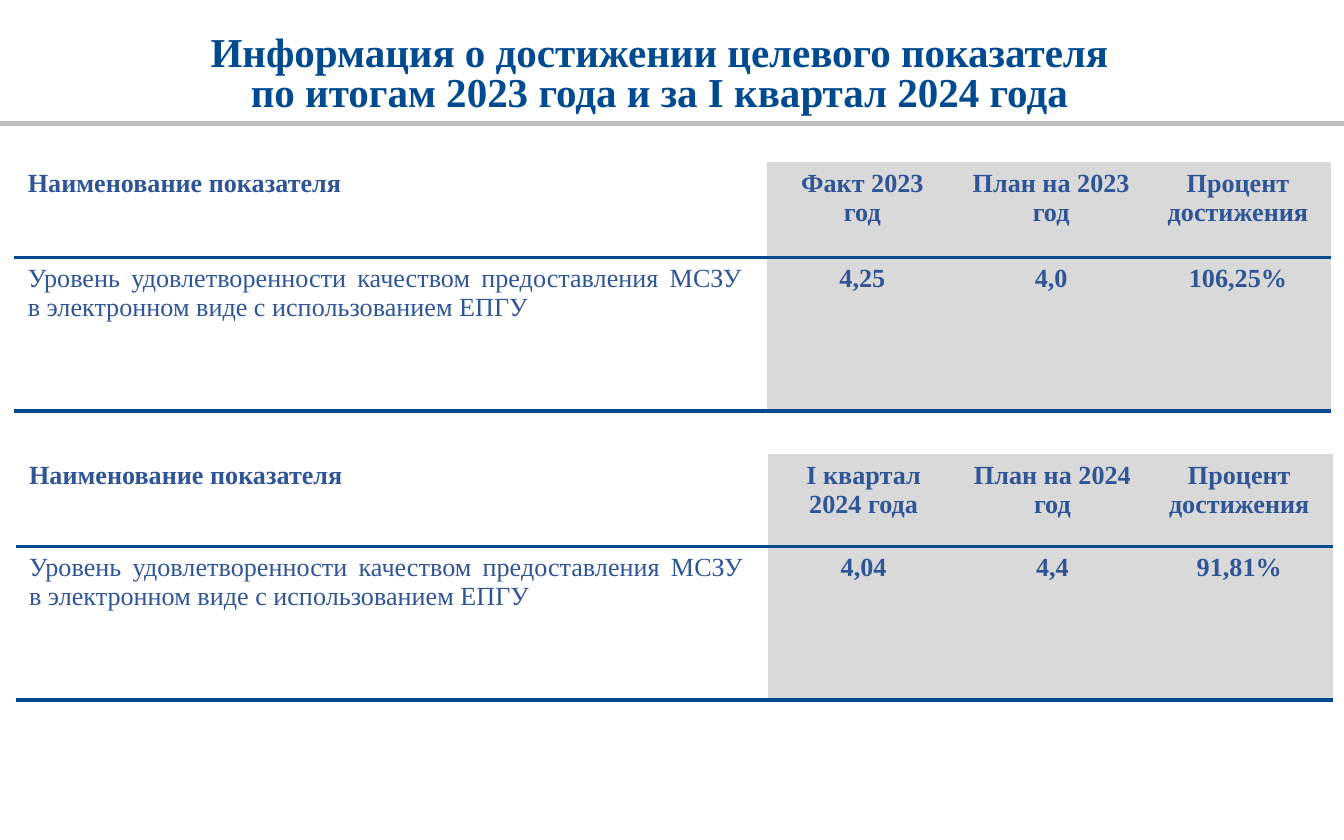
from lxml.etree import SubElement
from pptx import Presentation
from pptx.dml.color import RGBColor
from pptx.enum.shapes import MSO_CONNECTOR
from pptx.enum.text import MSO_ANCHOR, MSO_AUTO_SIZE, PP_ALIGN
from pptx.oxml.ns import qn
from pptx.util import Pt

NAVY = RGBColor(0x00, 0x4A, 0x90)
BLUE = RGBColor(0x2F, 0x55, 0x97)
GREY = RGBColor(0xD9, 0xD9, 0xD9)
RULE_GREY = RGBColor(0xBF, 0xBF, 0xBF)
FONT = "Times New Roman"
PAGE_WIDTH, PAGE_HEIGHT = 720, 450
NO_STYLE = "{2D5ABB26-0587-4C30-8999-92F81FD0307C}"

COLUMN_WIDTHS = (403.2, 102.2, 100.1, 100.1)
BODY_HEIGHT = 82.1
NAME_HEADING = "Наименование показателя"
PERCENT_HEADING = "Процент достижения"
INDICATOR = ("Уровень удовлетворенности качеством предоставления МСЗУ \v"
             "в электронном виде с использованием ЕПГУ")

# Left, top, header height, headings and values of each period
PERIODS = [
    (7.7, 86.9, 51.1, ("Факт 2023 год", "План на 2023 год"),
     ("4,25", "4,0", "106,25%")),
    (8.4, 243.4, 49.4, ("I квартал 2024 года", "План на 2024 год"),
     ("4,04", "4,4", "91,81%")),
]


def style_font(font, size, color, bold=True):
    font.name, font.size, font.bold = FONT, Pt(size), bold
    font.color.rgb = color


def add_heading(page, left, top, width, height):
    """Title with a grey rule across the page below it."""
    title = page.shapes.title
    title.left, title.top = Pt(left), Pt(top)
    title.width, title.height = Pt(width), Pt(height)
    frame = title.text_frame
    frame.text = ("Информация о достижении целевого показателя "
                  "по итогам 2023 года и за I квартал 2024 года")
    frame.word_wrap = True
    frame.auto_size = MSO_AUTO_SIZE.NONE
    frame.vertical_anchor = MSO_ANCHOR.TOP
    para = frame.paragraphs[0]
    para.alignment, para.line_spacing = PP_ALIGN.CENTER, 0.8
    style_font(para.font, 22, NAVY)

    rule_y = Pt(top + height + 1.4)
    rule = page.shapes.add_connector(
        MSO_CONNECTOR.STRAIGHT, 0, rule_y, Pt(PAGE_WIDTH), rule_y)
    rule.line.color.rgb, rule.line.width = RULE_GREY, Pt(2.5)
    SubElement(rule.element.spPr, qn("a:effectLst"))


def add_border(cell, side):
    line = SubElement(cell._tc.get_or_add_tcPr(), qn(f"a:{side}"),
                      w=str(Pt(2.21)))
    fill = SubElement(line, qn("a:solidFill"))
    SubElement(fill, qn("a:srgbClr"), val=str(NAVY))


def add_indicator_table(page, left, top, header_height, headings, values):
    """One period: a header row over a row with the indicator."""
    rows = [(NAME_HEADING, *headings, PERCENT_HEADING), (INDICATOR, *values)]
    heights = (header_height, BODY_HEIGHT)
    table = page.shapes.add_table(
        len(rows), len(COLUMN_WIDTHS), Pt(left), Pt(top),
        Pt(sum(COLUMN_WIDTHS)), Pt(sum(heights))).table
    table.first_row = table.horz_banding = False
    table._tbl.tblPr.find(qn("a:tableStyleId")).text = NO_STYLE

    for column, width in zip(table.columns, COLUMN_WIDTHS):
        column.width = Pt(width)
    for r, (texts, height) in enumerate(zip(rows, heights)):
        table.rows[r].height = Pt(height)
        for c, text in enumerate(texts):
            cell = table.cell(r, c)
            para = cell.text_frame.paragraphs[0]
            para.text = text
            is_indicator = r == 1 and c == 0
            style_font(para.font, 14, BLUE, bold=not is_indicator)
            # Rules run above and below the body row
            for side in ("lnT", "lnB") if r else ("lnB",):
                add_border(cell, side)
            if c:
                para.alignment = PP_ALIGN.CENTER
                cell.fill.solid()
                cell.fill.fore_color.rgb = GREY
            else:
                para.alignment = (PP_ALIGN.JUSTIFY if is_indicator
                                  else PP_ALIGN.LEFT)
                cell.fill.background()


def main():
    deck = Presentation()
    deck.slide_width, deck.slide_height = Pt(PAGE_WIDTH), Pt(PAGE_HEIGHT)
    page = deck.slides.add_slide(deck.slide_layouts[5])
    add_heading(page, 92.2, 15.8, 522, 49)
    for period in PERIODS:
        add_indicator_table(page, *period)
    deck.save("out.pptx")


if __name__ == "__main__":
    main()
